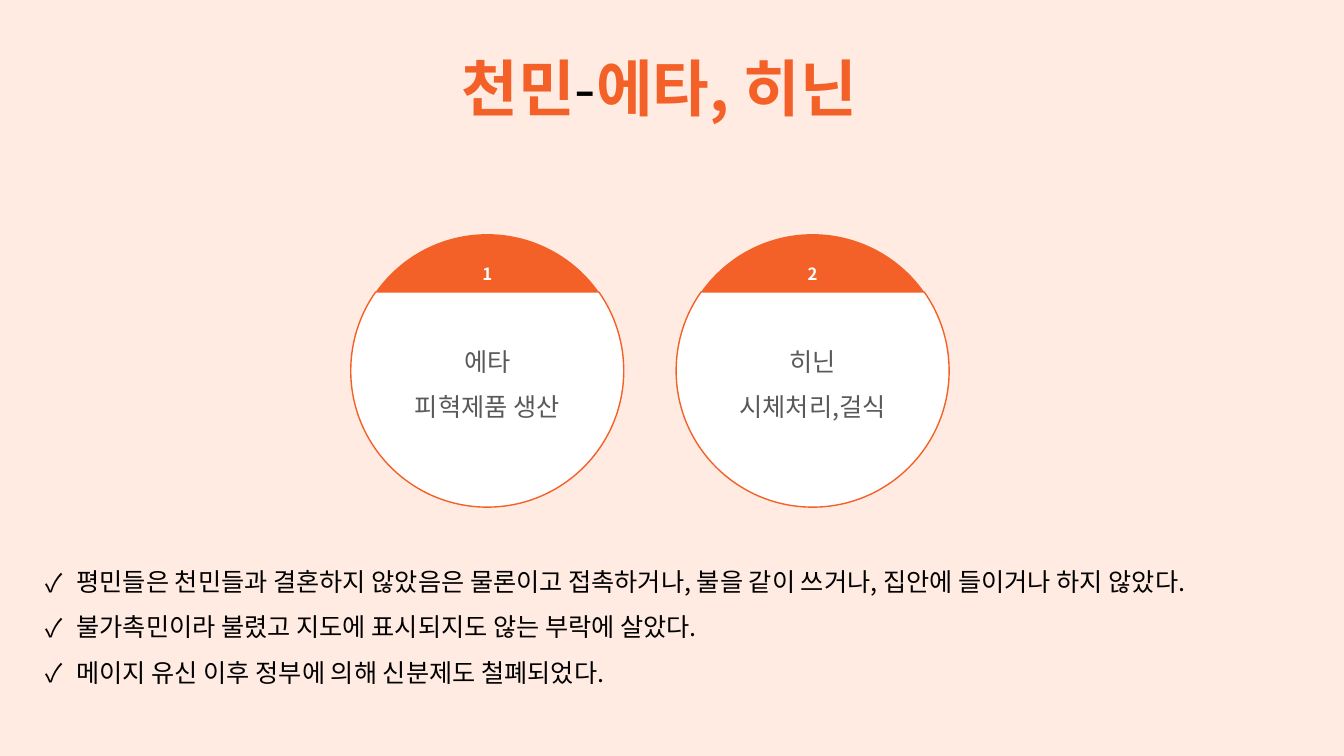
"""Build the slide on the two outcast groups, Eta and Hinin."""
from dataclasses import dataclass
from math import asin, cos, pi, sin, tan

from lxml import etree
from pptx import Presentation
from pptx import util as u
from pptx.dml.color import RGBColor
from pptx.enum import text
from pptx.oxml import ns

FONT = "Noto Sans CJK KR"
COLORS = {
    "background": "FFEBE2",
    "accent": "F46128",
    "white": "FFFFFF",
    "gray": "595959",
    "black": "000000",
}
CENTER_Y, RADIUS, CHORD_RISE = 9.34, 3.44, 1.98
FIRST_CENTER_X, CIRCLE_STEP = 12.28, 8.2
CHORD_ANGLE = asin(CHORD_RISE / RADIUS)
CAP_ANGLES = [pi + CHORD_ANGLE, 1.5 * pi, 2 * pi - CHORD_ANGLE]
BODY_ANGLES = [-CHORD_ANGLE, 0, pi / 2, pi, pi + CHORD_ANGLE]


@dataclass
class Group:
    number: str
    lines: list[str]


@dataclass
class TextStyle:
    size: float
    color: str
    bold: bool = False
    centered: bool = True
    spacing: float = 1.5
    bullet: str = ""


GROUPS = [
    Group("1", ["에타", "피혁제품 생산"]),
    Group("2", ["히닌", "시체처리,걸식"]),
]
TITLE_RUNS = [("천민", "accent", True), ("-", "black", False), ("에타, 히닌", "accent", True)]
FACTS = [
    "평민들은 천민들과 결혼하지 않았음은 물론이고 접촉하거나, 불을 같이 쓰거나, 집안에 들이거나 하지 않았다.",
    "불가촉민이라 불렸고 지도에 표시되지도 않는 부락에 살았다.",
    "메이지 유신 이후 정부에 의해 신분제도 철폐되었다.",
]
TITLE_STYLE = TextStyle(44, "accent", spacing=1.0)
NUMBER_STYLE = TextStyle(12, "white", bold=True)
GROUP_STYLE = TextStyle(18, "gray")
FACT_STYLE = TextStyle(18, "black", centered=False, bullet="✓")


def rgb(name: str) -> RGBColor:
    return RGBColor.from_string(COLORS[name])


def style_paragraph(paragraph, style: TextStyle) -> None:
    paragraph.alignment = text.PP_ALIGN.CENTER if style.centered else text.PP_ALIGN.LEFT
    paragraph.line_spacing = style.spacing
    font = paragraph.font
    font.name, font.size = FONT, u.Pt(style.size)
    font.color.rgb = rgb(style.color)
    if style.bold:
        font.bold = True
    properties = paragraph._p.get_or_add_pPr()
    defaults = properties.find(ns.qn("a:defRPr"))
    etree.SubElement(defaults, ns.qn("a:ea"), typeface=FONT)
    if style.bullet:
        indent = int(u.Cm(0.79))
        properties.set("marL", str(indent))
        properties.set("indent", str(-indent))
        defaults.addprevious(etree.Element(ns.qn("a:buFont"), typeface=FONT))
        defaults.addprevious(etree.Element(ns.qn("a:buChar"), char=style.bullet))


def add_text(slide, box: tuple[float, float, float, float], lines: list[str], style: TextStyle):
    frame = slide.shapes.add_textbox(*map(u.Cm, box)).text_frame
    frame.word_wrap = True
    for index, line in enumerate(lines):
        paragraph = frame.add_paragraph() if index else frame.paragraphs[0]
        if line:
            paragraph.add_run().text = line
        style_paragraph(paragraph, style)
    return frame


def arc_points(center_x: float, angles: list[float]) -> list[tuple[int, int]]:
    """Return the start of an arc, then two handles and an end for each curve."""

    def point(angle: float, reach: float) -> tuple[int, int]:
        return (
            u.Cm(center_x + RADIUS * (cos(angle) - reach * sin(angle))),
            u.Cm(CENTER_Y + RADIUS * (sin(angle) + reach * cos(angle))),
        )

    points = [point(angles[0], 0)]
    for start, end in zip(angles, angles[1:]):
        reach = 4 / 3 * tan((end - start) / 4)
        points += [point(start, reach), point(end, -reach), point(end, 0)]
    return points


def bend_lines(shape) -> None:
    """Turn each three straight segments into one cubic curve."""
    lines = list(shape._element.iter(ns.qn("a:lnTo")))
    for first in range(0, len(lines), 3):
        curve = etree.Element(ns.qn("a:cubicBezTo"))
        lines[first].addprevious(curve)
        for line in lines[first:first + 3]:
            curve.append(line[0])
            line.getparent().remove(line)


def add_circle_segment(slide, center_x: float, angles: list[float], fill: str, outlined: bool) -> None:
    points = arc_points(center_x, angles)
    builder = slide.shapes.build_freeform(*points[0])
    builder.add_line_segments(points[1:], close=True)
    shape = builder.convert_to_shape()
    bend_lines(shape)
    shape.shadow.inherit = False
    shape.fill.solid()
    shape.fill.fore_color.rgb = rgb(fill)
    if outlined:
        shape.line.color.rgb = rgb("accent")
        shape.line.width = u.Pt(1)
    else:
        shape.line.fill.background()


def add_group(slide, group: Group, center_x: float) -> None:
    add_circle_segment(slide, center_x, CAP_ANGLES, "accent", False)
    add_circle_segment(slide, center_x, BODY_ANGLES, "white", True)
    add_text(slide, (center_x - 0.38, 6.27, 0.76, 0.91), [group.number], NUMBER_STYLE)
    add_text(slide, (center_x - 3.63, 8.21, 7.26, 2.4), group.lines, GROUP_STYLE)


def add_title(slide) -> None:
    frame = add_text(slide, (10.85, 1.14, 11.53, 2.13), [""], TITLE_STYLE)
    for wording, color, bold in TITLE_RUNS:
        run = frame.paragraphs[0].add_run()
        run.text = wording
        run.font.bold = bold
        run.font.color.rgb = rgb(color)


def main() -> None:
    presentation = Presentation()
    presentation.slide_width, presentation.slide_height = u.Cm(33.87), u.Cm(19.05)
    slide = presentation.slides.add_slide(presentation.slide_layouts[6])
    slide.background.fill.solid()
    slide.background.fill.fore_color.rgb = rgb("background")
    add_title(slide)
    for index, group in enumerate(GROUPS):
        add_group(slide, group, FIRST_CENTER_X + index * CIRCLE_STEP)
    add_text(slide, (0.89, 13.76, 32.69, 4.72), FACTS, FACT_STYLE)
    presentation.save("out.pptx")


if __name__ == "__main__":
    main()
